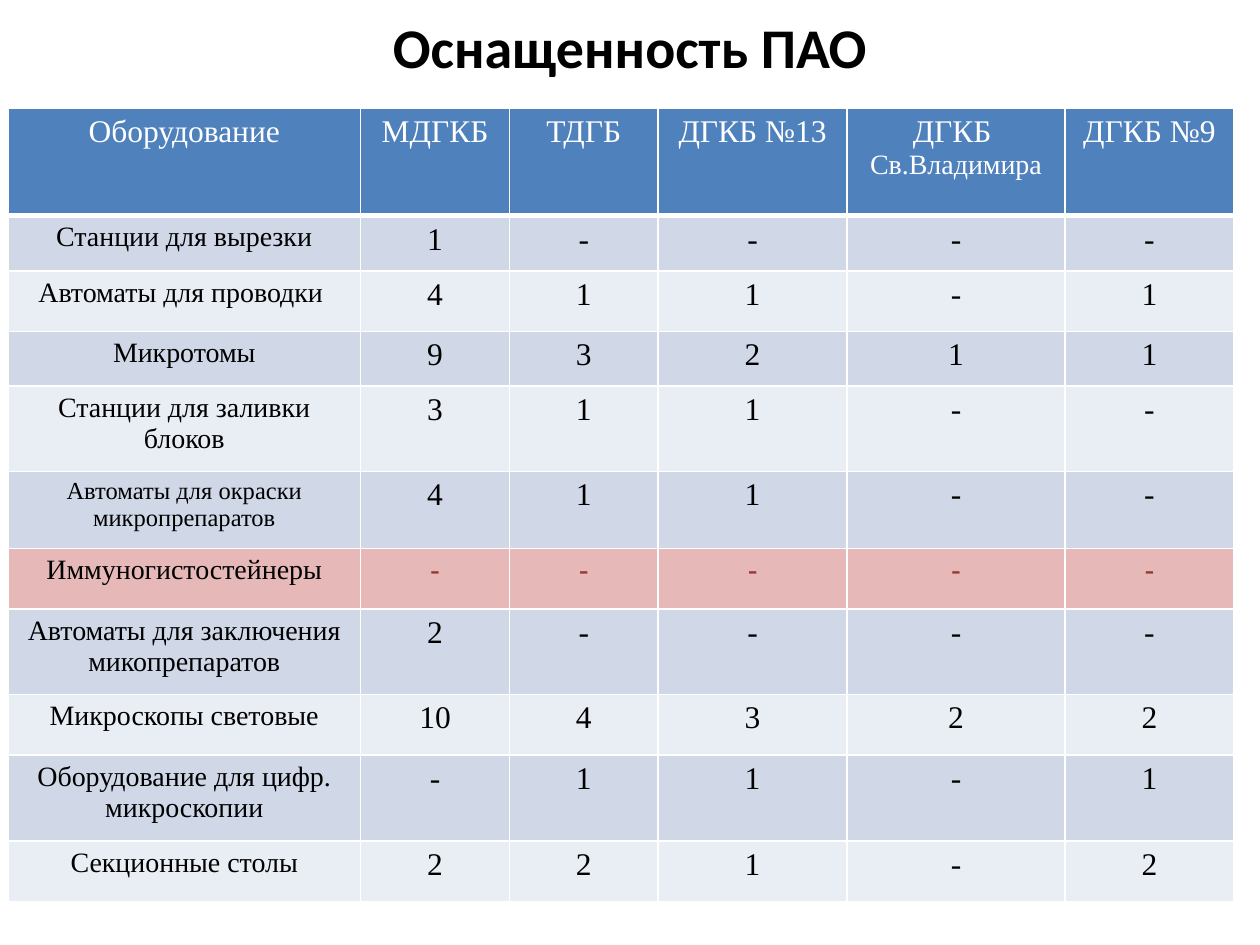
from lxml.etree import SubElement
from pptx import Presentation
from pptx.dml.color import RGBColor
from pptx.enum.text import MSO_ANCHOR as Anchor, MSO_AUTO_SIZE as AutoSize, PP_ALIGN as Align
from pptx.oxml.ns import qn
from pptx.util import Pt

COLUMN_WIDTHS = [201.6, 85, 85, 108, 124.5, 96.5]
HEADERS = ["Оборудование", "МДГКБ", "ТДГБ", "ДГКБ №13", "ДГКБ \nСв.Владимира", "ДГКБ №9"]
HEADER_HEIGHT = 61.2
# Row height, equipment, count in each hospital
EQUIPMENT = [
    (31.7, "Станции для вырезки", "1 - - - -"),
    (34.6, "Автоматы для проводки ", "4 1 1 - 1"),
    (31, "Микротомы", "9 3 2 1 1"),
    (49, "Станции для заливки блоков", "3 1 1 - -"),
    (43.9, "Автоматы для окраски микропрепаратов", "4 1 1 - -"),
    (34.6, "Иммуногистостейнеры", "- - - - -"),
    (49, "Автоматы для заключения микопрепаратов", "2 - - - -"),
    (34.6, "Микроскопы световые", "10 4 3 2 2"),
    (49, "Оборудование для цифр. микроскопии", "- 1 1 - 1"),
    (34.6, "Секционные столы", "2 2 1 - 2"),
]
MISSING = "Иммуногистостейнеры"
SMALL_LABELS = {"Автоматы для окраски микропрепаратов": 14, "Св.Владимира": 16}


def color(value):
    return RGBColor.from_string(value)


class SlideBuilder:
    header_fill, missing_fill = "4F81BD", "E6B9B8"
    band_fills = ["D0D8E8", "E9EDF4"]
    white, black, dark_red = "FFFFFF", "000000", "953735"

    def __init__(self, page):
        self.page = page

    def put_text(self, frame, text, tint, **formats):
        frame.text = text
        for para in frame.paragraphs:
            para.alignment = Align.CENTER
            for span in para.runs:
                for name, value in formats.items():
                    setattr(span.font, name, value)
                if span.text in SMALL_LABELS:
                    span.font.size = Pt(SMALL_LABELS[span.text])
                span.font.color.rgb = color(tint)

    def title(self, text, left, top, width, height):
        box = self.page.shapes.title
        for name, value in dict(left=left, top=top, width=width, height=height).items():
            setattr(box, name, Pt(value))
        frame = box.text_frame
        self.put_text(frame, text, self.black, name="Calibri", size=Pt(32), bold=True)
        frame.word_wrap = True
        frame.auto_size = AutoSize.SHAPE_TO_FIT_TEXT
        frame.vertical_anchor = Anchor.TOP

    def borders(self, cell, bottom):
        properties = cell._tc.get_or_add_tcPr()
        for side, width in dict(L=1, R=1, T=1, B=bottom).items():
            line = SubElement(properties, qn(f"a:ln{side}"), w=str(Pt(width)))
            fill = SubElement(line, qn("a:solidFill"))
            SubElement(fill, qn("a:srgbClr"), val=self.white)

    def cell(self, cell, text, fill, tint, size, bold=False, bottom=1):
        self.borders(cell, bottom)
        cell.fill.solid()
        cell.fill.fore_color.rgb = color(fill)
        self.put_text(cell.text_frame, text, tint, name="Times New Roman", size=Pt(size), bold=bold)

    def table(self, left, top, widths, heights):
        frame = self.page.shapes.add_table(
            len(heights), len(widths), Pt(left), Pt(top), Pt(sum(widths)), Pt(sum(heights)))
        for column, width in zip(frame.table.columns, widths):
            column.width = Pt(width)
        for row, height in zip(frame.table.rows, heights):
            row.height = Pt(height)
        return frame.table


def main():
    deck = Presentation()
    deck.slide_width, deck.slide_height = Pt(720), Pt(540)
    builder = SlideBuilder(deck.slides.add_slide(deck.slide_layouts[5]))

    # Title
    builder.title("Оснащенность ПАО", 48, 3.6, 624, 46)

    # Table header
    heights = [HEADER_HEIGHT] + [height for height, _, _ in EQUIPMENT]
    table = builder.table(4.5, 62, COLUMN_WIDTHS, heights)
    for column, text in enumerate(HEADERS):
        builder.cell(table.cell(0, column), text, builder.header_fill, builder.white, 18, bottom=3)

    # Equipment rows in alternating bands, the missing equipment in red
    for row, (_, label, counts) in enumerate(EQUIPMENT, start=1):
        missing = label == MISSING
        fill = builder.missing_fill if missing else builder.band_fills[(row - 1) % 2]
        builder.cell(table.cell(row, 0), label, fill, builder.black, 16)
        tint, size = (builder.dark_red, 16) if missing else (builder.black, 18)
        for column, count in enumerate(counts.split(), start=1):
            builder.cell(table.cell(row, column), count, fill, tint, size, bold=missing)

    deck.save("out.pptx")


if __name__ == "__main__":
    main()
